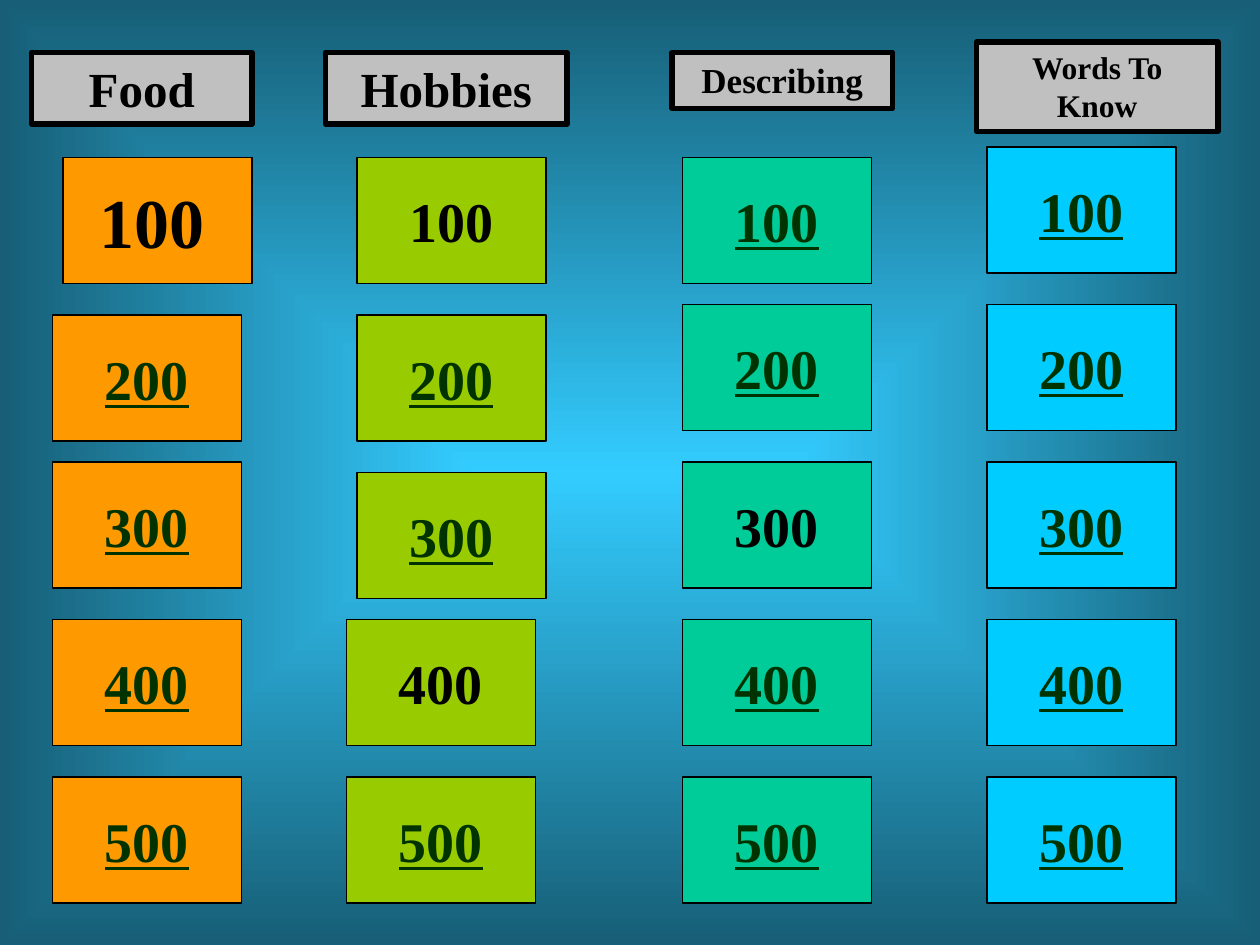
from lxml import etree
from pptx import Presentation
from pptx.dml.color import RGBColor
from pptx.enum.shapes import MSO_SHAPE
from pptx.enum.text import MSO_ANCHOR, MSO_AUTO_SIZE, PP_ALIGN
from pptx.oxml.ns import qn
from pptx.util import Pt

RECTANGLE = MSO_SHAPE.RECTANGLE
BUTTON = MSO_SHAPE.ACTION_BUTTON_CUSTOM
TOP, MIDDLE = MSO_ANCHOR.TOP, MSO_ANCHOR.MIDDLE
FIT_SHAPE = MSO_AUTO_SIZE.SHAPE_TO_FIT_TEXT
CENTER = PP_ALIGN.CENTER

BLACK = RGBColor(0x00, 0x00, 0x00)
DARK_GREEN = RGBColor(0x00, 0x33, 0x00)
SILVER = RGBColor(0xC0, 0xC0, 0xC0)
ORANGE = RGBColor(0xFF, 0x99, 0x00)
LIME = RGBColor(0x99, 0xCC, 0x00)
TEAL = RGBColor(0x00, 0xCC, 0x99)
CYAN = RGBColor(0x00, 0xCC, 0xFF)
SKY = RGBColor(0x33, 0xCC, 0xFF)
DEEP_BLUE = RGBColor(0x17, 0x5E, 0x76)

FONT = "Times New Roman"
BUTTON_WIDTH, BUTTON_HEIGHT = 108, 72
FIRST_TOP, ROW_STEP, NUDGE = 84, 90, 6
POINTS = ("100", "200", "300", "400", "500")

# heading, heading box, heading size, colour, button left,
# rows nudged right, rows nudged down, rows shown as plain text
CATEGORIES = (
    ("Food", (18, 30, 126, 41), 28, ORANGE, 30, {0}, {0, 1}, {0}),
    ("Hobbies", (186, 30, 138, 41), 28, LIME, 198, {0, 1, 2}, {0, 1, 2}, {0, 3}),
    ("Describing", (384, 30, 126, 32), 20, TEAL, 390, set(), {0}, {2}),
    ("Words To Know", (558, 24, 138, 51), 18, CYAN, 564, set(), set(), set()),
)


def paint_background(slide):
    """Fill the background with a gradient that spreads from the centre."""
    fill = slide.background.fill
    fill.gradient()
    for stop, color in zip(fill.gradient_stops, (SKY, DEEP_BLUE)):
        stop.color.rgb = color
    linear = next(slide.element.iter(qn("a:lin")))
    shade = etree.Element(qn("a:path"), {"path": "shape"})
    sides = {side: "50000" for side in "ltrb"}
    etree.SubElement(shade, qn("a:fillToRect"), sides)
    linear.getparent().replace(linear, shade)


def add_box(slide, kind, box, fill, line_width, anchor, wrap):
    """Add an outlined box and return its text frame."""
    shape = slide.shapes.add_shape(kind, *map(Pt, box))
    shape.shadow.inherit = False
    shape.fill.solid()
    shape.fill.fore_color.rgb = fill
    shape.line.color.rgb = BLACK
    shape.line.width = Pt(line_width)
    frame = shape.text_frame
    frame.vertical_anchor = anchor
    frame.word_wrap = wrap
    frame.paragraphs[0].alignment = CENTER
    return frame


def add_text(frame, text, size, color=BLACK, underline=False):
    """Append a bold run to the first paragraph of a frame."""
    run = frame.paragraphs[0].add_run()
    run.text = text
    font = run.font
    font.name, font.size, font.bold = FONT, Pt(size), True
    font.color.rgb = color
    if underline:
        font.underline = True


def add_heading(slide, box, text, size):
    """Place a category heading in its box."""
    frame = add_box(slide, RECTANGLE, box, SILVER, 3, TOP, True)
    frame.auto_size = FIT_SHAPE
    add_text(frame, text, size)


def add_button(slide, box, text, fill, plain, large):
    """Place one points button in its box."""
    frame = add_box(slide, BUTTON, box, fill, 0.75, MIDDLE, False)
    if large:
        add_text(frame, text, 40)
        add_text(frame, " ", 24)
    elif plain:
        add_text(frame, text, 32)
    else:
        add_text(frame, text, 32, DARK_GREEN, True)


def add_category(slide, category):
    """Place a heading and its column of points buttons."""
    heading, box, size, color, left, right_rows, down_rows, plain_rows = category
    add_heading(slide, box, heading, size)
    for row, points in enumerate(POINTS):
        x = left + NUDGE * (row in right_rows)
        y = FIRST_TOP + ROW_STEP * row + NUDGE * (row in down_rows)
        large = heading == "Food" and row == 0
        add_button(slide, (x, y, BUTTON_WIDTH, BUTTON_HEIGHT), points, color,
                   row in plain_rows, large)


def main():
    """Build the game board and save it."""
    presentation = Presentation()
    presentation.slide_width, presentation.slide_height = Pt(720), Pt(540)
    slide = presentation.slides.add_slide(presentation.slide_layouts[6])
    paint_background(slide)
    for category in CATEGORIES:
        add_category(slide, category)
    presentation.save("out.pptx")


if __name__ == "__main__":
    main()
